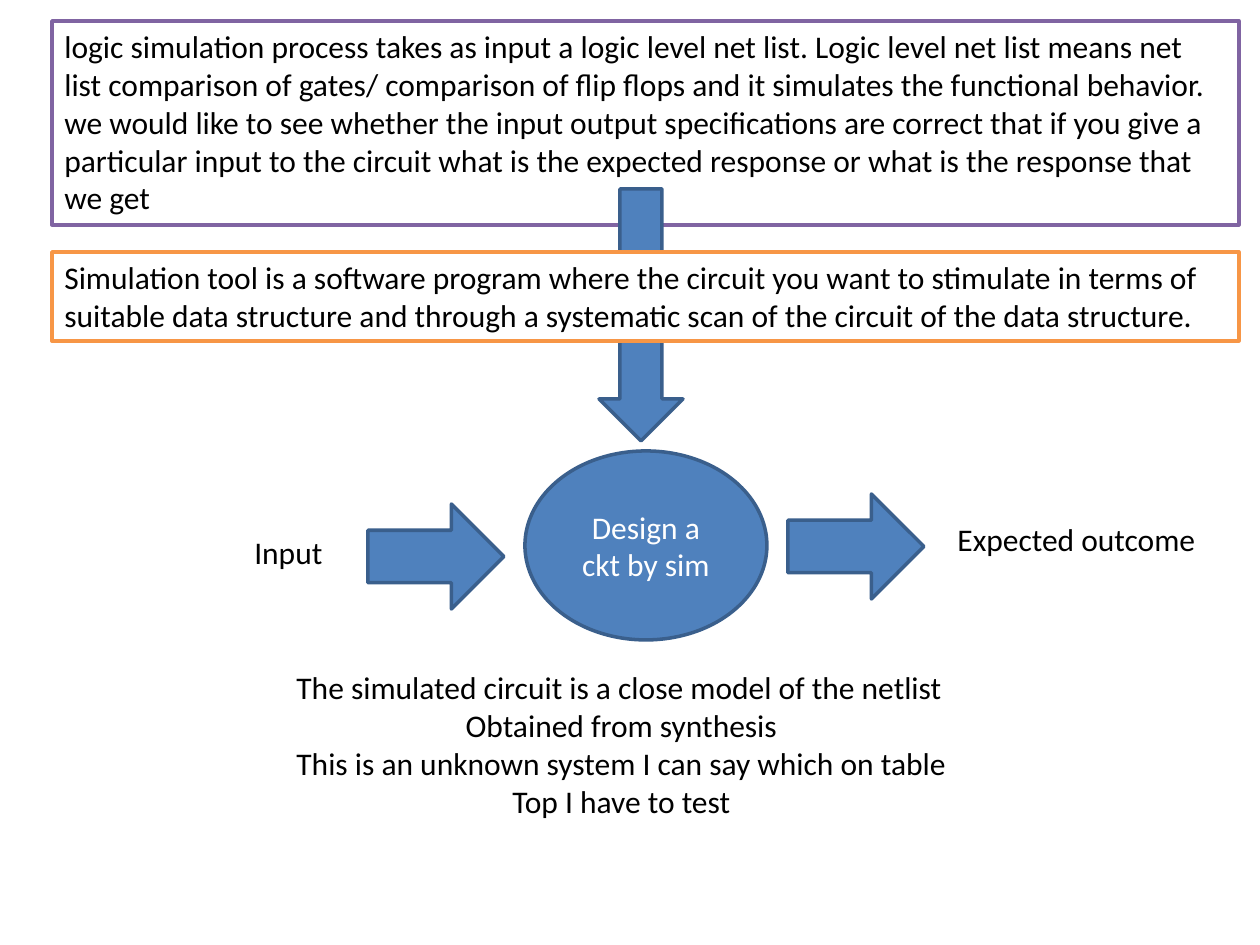
import pptx
import pptx.util
import pptx.dml.color
import pptx.enum.shapes
import pptx.enum.text

RGB = pptx.dml.color.RGBColor
SHAPE = pptx.enum.shapes.MSO_SHAPE
ALIGN = pptx.enum.text.PP_ALIGN
ANCHOR = pptx.enum.text.MSO_ANCHOR
AUTO = pptx.enum.text.MSO_AUTO_SIZE

BLACK, WHITE = RGB(0, 0, 0), RGB(255, 255, 255)
BLUE, DARK_BLUE = RGB(0x4F, 0x81, 0xBD), RGB(0x3A, 0x5F, 0x8C)
PURPLE, ORANGE = RGB(0x80, 0x64, 0xA2), RGB(0xF7, 0x96, 0x46)
PX = 914400 // 126  # EMU in one px

# Content
PROCESS = [
    "logic simulation process takes as input a logic level net list. Logic level "
    "net list means net list comparison of gates/ comparison of flip flops and it "
    "simulates the functional behavior.",
    "we would like to see whether the input output specifications are correct that "
    "if you give a particular input to the circuit what is the expected response or "
    "what is the response that we get",
]
TOOL = [
    "Simulation tool is a software program where the circuit you want to stimulate "
    "in terms of suitable data structure and through a systematic scan of the "
    "circuit of the data structure.",
]
NOTES = [
    "The simulated circuit is a close model of the netlist",
    "Obtained from synthesis",
    "This is an unknown system I can say which on table",
    "Top I have to test",
]
# Kind, place in px, fill, line, text, from back to front
SHAPES = [
    (SHAPE.RECTANGLE, (52, 21, 1187, 204), WHITE, PURPLE, PROCESS),
    (SHAPE.DOWN_ARROW, (599, 189, 84, 252), BLUE, DARK_BLUE, []),
    (SHAPE.RECTANGLE, (52, 252, 1187, 89), WHITE, ORANGE, TOOL),
    (SHAPE.OVAL, (525, 451, 242, 189), BLUE, DARK_BLUE, ["Design a ckt by sim"]),
    (SHAPE.RIGHT_ARROW, (368, 504, 136, 105), BLUE, DARK_BLUE, []),
    (SHAPE.RIGHT_ARROW, (788, 494, 136, 105), BLUE, DARK_BLUE, []),
]
# Place in px, text, alignment of the paragraphs after the first
LABELS = [
    ((242, 527, 101, 50), ["Input"], ALIGN.LEFT),
    ((945, 514, 273, 50), ["Expected outcome"], ALIGN.LEFT),
    ((284, 662, 727, 165), NOTES, ALIGN.CENTER),
]


def emu(place):
    return [v * PX for v in place]


def write(sp, lines, color=BLACK, first=ALIGN.LEFT, rest=ALIGN.LEFT,
          anchor=ANCHOR.TOP, wrap=True, auto=AUTO.SHAPE_TO_FIT_TEXT):
    tf = sp.text_frame
    tf.word_wrap, tf.auto_size, tf.vertical_anchor = wrap, auto, anchor
    for i, line in enumerate(lines):
        p = tf.add_paragraph() if i else tf.paragraphs[0]
        p.alignment = rest if i else first
        r = p.add_run()
        r.text = line
        r.font.name, r.font.size = "Calibri", pptx.util.Pt(18)
        r.font.color.rgb = color


prs = pptx.Presentation()
prs.slide_width, prs.slide_height = pptx.util.Inches(10), pptx.util.Inches(7.5)
s = prs.slides.add_slide(prs.slide_layouts[6])

# Boxes, arrows and the circuit
for kind, place, fill, line, lines in SHAPES:
    sp = s.shapes.add_shape(kind, *emu(place))
    sp.shadow.inherit = False
    sp.fill.solid()
    sp.fill.fore_color.rgb = fill
    sp.line.color.rgb = line
    sp.line.width = pptx.util.Pt(2)
    if kind == SHAPE.OVAL:
        write(sp, lines, color=WHITE, first=ALIGN.CENTER,
              anchor=ANCHOR.MIDDLE, auto=AUTO.NONE)
    elif lines:
        write(sp, lines)

# Labels and closing notes
for place, lines, rest in LABELS:
    write(s.shapes.add_textbox(*emu(place)), lines, rest=rest, wrap=False)

prs.save("out.pptx")
